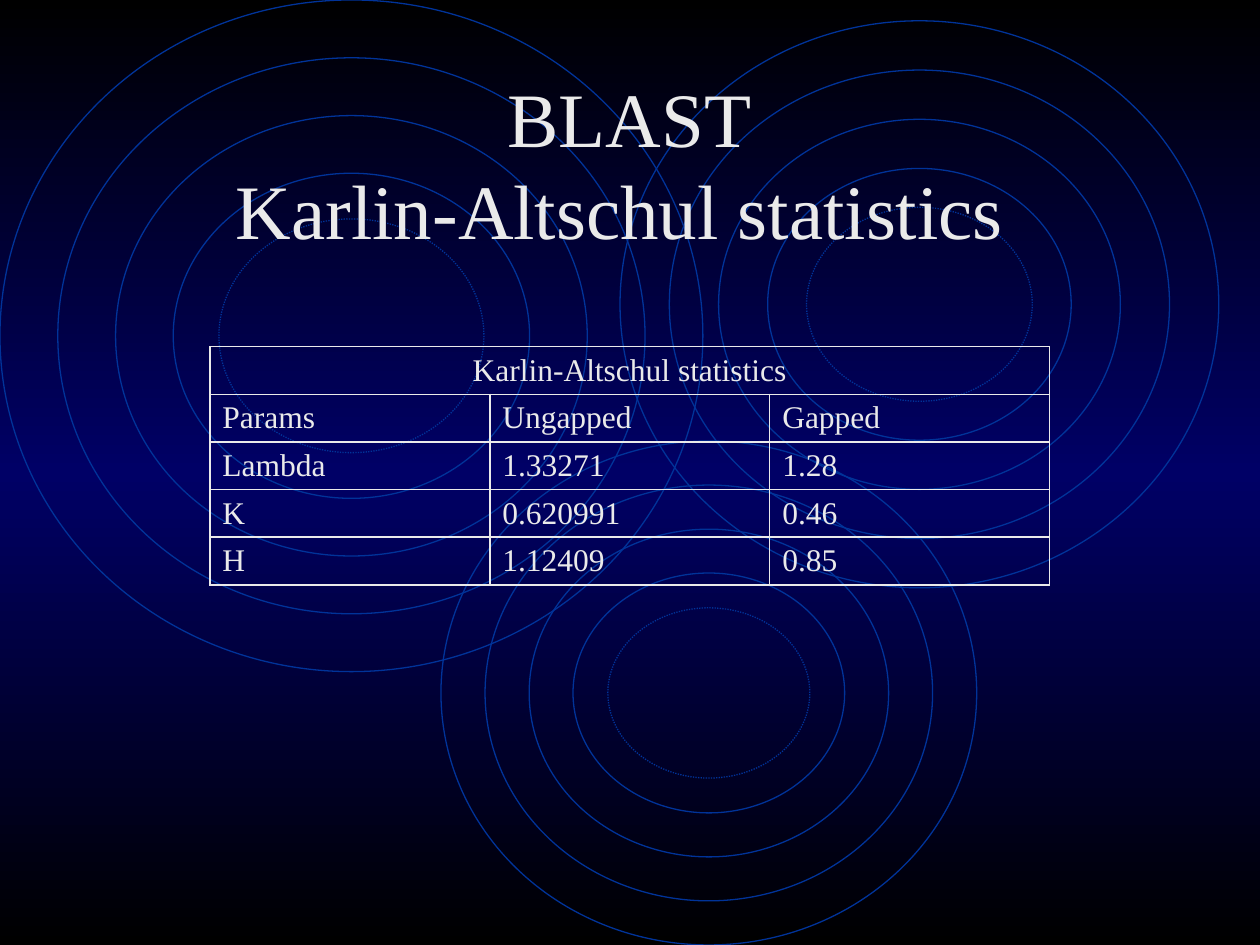
from copy import deepcopy
from dataclasses import dataclass

from lxml import etree
from pptx import Presentation
from pptx import util as u
from pptx.dml.color import RGBColor
from pptx.enum import dml, shapes, text
from pptx.oxml.ns import qn


@dataclass(frozen=True)
class Theme:
    font: str = "Times New Roman"
    ink: str = "EAEAEA"
    ring: str = "003399"
    gradient: tuple = (("000000", 0), ("000066", 0.5), ("000000", 1))
    title_size: int = 44
    cell_size: int = 18
    ring_width: float = 0.75
    border_width: float = 1


class Deck:
    """Hold the theme and the current slide, and draw each kind of element."""

    def __init__(self, prs, theme):
        self.theme = theme
        self.slide = prs.slides.add_slide(prs.slide_layouts[5])

    def background(self):
        fill = self.slide.background.fill
        fill.gradient()
        fill.gradient_angle = 90
        stops = self.slide.element.find(".//" + qn("a:gsLst"))
        stops.append(deepcopy(stops[-1]))
        for stop, (color, position) in zip(fill.gradient_stops, self.theme.gradient):
            stop.color.rgb = RGBColor.from_string(color)
            stop.position = position

    def format_text(self, tf, size, align):
        tf.vertical_anchor = text.MSO_ANCHOR.MIDDLE
        values = {"name": self.theme.font, "size": u.Pt(size), "bold": False}
        for p in tf.paragraphs:
            p.alignment = align
            for r in p.runs:
                for key, value in values.items():
                    setattr(r.font, key, value)
                r.font.color.rgb = RGBColor.from_string(self.theme.ink)

    def rings(self, left, top, width, height, insets=(0, 0.0823, 0.1645, 0.2465, 0.3115)):
        group = self.slide.shapes.add_group_shape()
        for inset in insets:
            d = width * inset
            box = (left + d, top + d, width - 2 * d, height - 2 * d)
            sp = group.shapes.add_shape(shapes.MSO_SHAPE.OVAL, *map(u.Cm, box))
            sp.shadow.inherit = False
            sp.fill.background()
            sp.line.color.rgb = RGBColor.from_string(self.theme.ring)
            sp.line.width = u.Pt(self.theme.ring_width)
            if inset == insets[-1]:
                sp.line.dash_style = dml.MSO_LINE.ROUND_DOT

    def title(self, words, **box):
        sp = self.slide.shapes.title
        for key, value in box.items():
            setattr(sp, key, u.Cm(value))
        tf = sp.text_frame
        tf.text = words
        tf.word_wrap = True
        tf.auto_size = text.MSO_AUTO_SIZE.NONE
        self.format_text(tf, self.theme.title_size, text.PP_ALIGN.CENTER)
        self.slide.shapes.element.append(sp.element)

    def border(self, cell):
        tcPr = cell._tc.get_or_add_tcPr()
        for side in ("lnL", "lnR", "lnT", "lnB"):
            ln = etree.SubElement(tcPr, qn("a:" + side), w=str(u.Pt(self.theme.border_width)))
            fill = etree.SubElement(ln, qn("a:solidFill"))
            etree.SubElement(fill, qn("a:srgbClr"), val=self.theme.ink)

    def table(self, heading, rows, left, top, width, row_height):
        count, cols = len(rows) + 1, len(rows[0])
        box = (left, top, width, row_height * count)
        table = self.slide.shapes.add_table(count, cols, *map(u.Cm, box)).table
        table.first_row = table.horz_banding = False
        table.cell(0, 0).merge(table.cell(0, cols - 1))
        for i, row in enumerate([[heading] + [""] * (cols - 1)] + rows):
            align = text.PP_ALIGN.LEFT if i else text.PP_ALIGN.CENTER
            for j, words in enumerate(row):
                cell = table.cell(i, j)
                cell.text = words
                self.border(cell)
                cell.fill.background()
                self.format_text(cell.text_frame, self.theme.cell_size, align)
                cell.vertical_anchor = text.MSO_ANCHOR.MIDDLE


def main():
    prs = Presentation()
    prs.slide_width, prs.slide_height = u.Cm(25.4), u.Cm(19.05)
    deck = Deck(prs, Theme())
    deck.background()
    for box in ((0, 0, 14.17, 13.54), (8.89, 8.89, 10.8, 10.16), (12.5, 0.42, 12.07, 11.43)):
        deck.rings(*box)
    deck.title("BLAST\vKarlin-Altschul statistics ", left=1.9, top=1.69, width=21.59, height=3.18)
    rows = [
        ["Params", "Ungapped", "Gapped"],
        ["Lambda", "1.33271", "1.28"],
        ["K", "0.620991", "0.46"],
        ["H", "1.12409", "0.85"],
    ]
    deck.table("Karlin-Altschul statistics", rows, left=4.23, top=6.99, width=16.93, row_height=0.96)
    prs.save("out.pptx")


if __name__ == "__main__":
    main()
